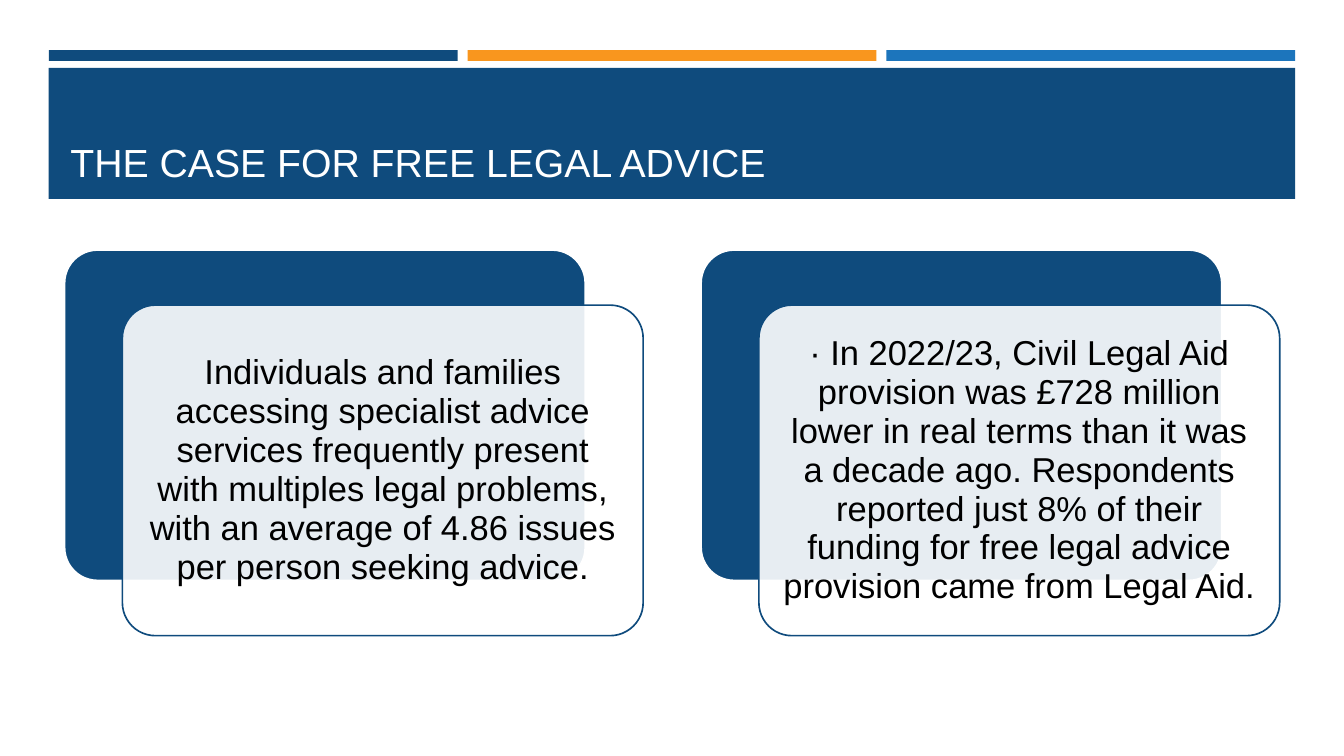
import pptx
import pptx.dml.color
import pptx.enum.shapes
import pptx.enum.text
import pptx.oxml.ns
import pptx.util
from lxml import etree

Pt = pptx.util.Pt
Shape = pptx.enum.shapes.MSO_SHAPE
Align = pptx.enum.text.PP_ALIGN
Anchor = pptx.enum.text.MSO_ANCHOR

NAVY, ORANGE, BLUE = "0F4B7D", "F9961E", "1C75BC"
WHITE, BLACK = "FFFFFF", "000000"


def color(hex_code):
    return pptx.dml.color.RGBColor.from_string(hex_code)


class SlideBuilder:
    font = "Arial"

    def __init__(self, slide):
        self.slide = slide

    def panel(self, left, top, width, height, fill, kind=Shape.RECTANGLE,
              line=None, line_width=0, opacity=100):
        shape = self.slide.shapes.add_shape(
            kind, Pt(left), Pt(top), Pt(width), Pt(height))
        shape.shadow.inherit = False
        shape.fill.solid()
        shape.fill.fore_color.rgb = color(fill)
        if opacity < 100:
            rgb = shape.fill._xPr.find(".//" + pptx.oxml.ns.qn("a:srgbClr"))
            alpha = etree.SubElement(rgb, pptx.oxml.ns.qn("a:alpha"))
            alpha.set("val", str(opacity * 1000))
        if line:
            shape.line.color.rgb = color(line)
            shape.line.width = Pt(line_width)
        else:
            shape.line.fill.background()
        return shape

    def card(self, left, top, width, height, fill, line, line_width, opacity=100):
        shape = self.panel(left, top, width, height, fill,
                           Shape.ROUNDED_RECTANGLE, line, line_width, opacity)
        shape.adjustments[0] = 0.1
        return shape

    def text(self, left, top, width, height, words, size, ink, anchor,
             align=Align.LEFT, spacing=1.0, inset_x=7.2, inset_y=3.6):
        box = self.slide.shapes.add_textbox(
            Pt(left), Pt(top), Pt(width), Pt(height))
        frame = box.text_frame
        frame.word_wrap = True
        frame.vertical_anchor = anchor
        frame.margin_left = frame.margin_right = Pt(inset_x)
        frame.margin_top = frame.margin_bottom = Pt(inset_y)
        frame.text = words
        para = frame.paragraphs[0]
        para.alignment = align
        para.line_spacing = spacing
        for span in para.runs:
            span.font.name = self.font
            span.font.size = Pt(size)
            span.font.color.rgb = color(ink)
        return box


def main():
    deck = pptx.Presentation()
    deck.slide_width, deck.slide_height = Pt(1440), Pt(810)
    page = SlideBuilder(deck.slides.add_slide(deck.slide_layouts[6]))

    # Accent bars
    for index, fill in enumerate((NAVY, ORANGE, BLUE)):
        page.panel(52.4 + index * 448.7, 53.8, 437.8, 11.4, fill)

    # Title band
    page.panel(52, 72.7, 1335.6, 140.4, NAVY)
    page.text(68.4, 82.8, 1302.5, 119.5, "THE CASE FOR FREE LEGAL ADVICE",
              42, WHITE, Anchor.BOTTOM)

    # Paired cards: navy back, translucent front, statement
    statements = (
        "Individuals and families accessing specialist advice services "
        "frequently present with multiples legal problems, with an average "
        "of 4.86 issues per person seeking advice.",
        "· In 2022/23, Civil Legal Aid provision was £728 million lower in "
        "real terms than it was a decade ago. Respondents reported just 8% "
        "of their funding for free legal advice provision came from Legal Aid.",
    )
    width, height = 558, 354.2
    for index, words in enumerate(statements):
        left, top = 69.1 + index * 682, 267.8
        page.card(left, top, width, height, NAVY, WHITE, 2)
        page.card(left + 62, top + 59.1, width, height, WHITE, NAVY, 1.75,
                  opacity=90)
        page.text(left + 72.4, top + 69.5, width - 20.8, height - 20.8, words,
                  37, BLACK, Anchor.MIDDLE, Align.CENTER, spacing=0.94,
                  inset_x=10.8, inset_y=10.8)

    deck.save("out.pptx")


if __name__ == "__main__":
    main()
